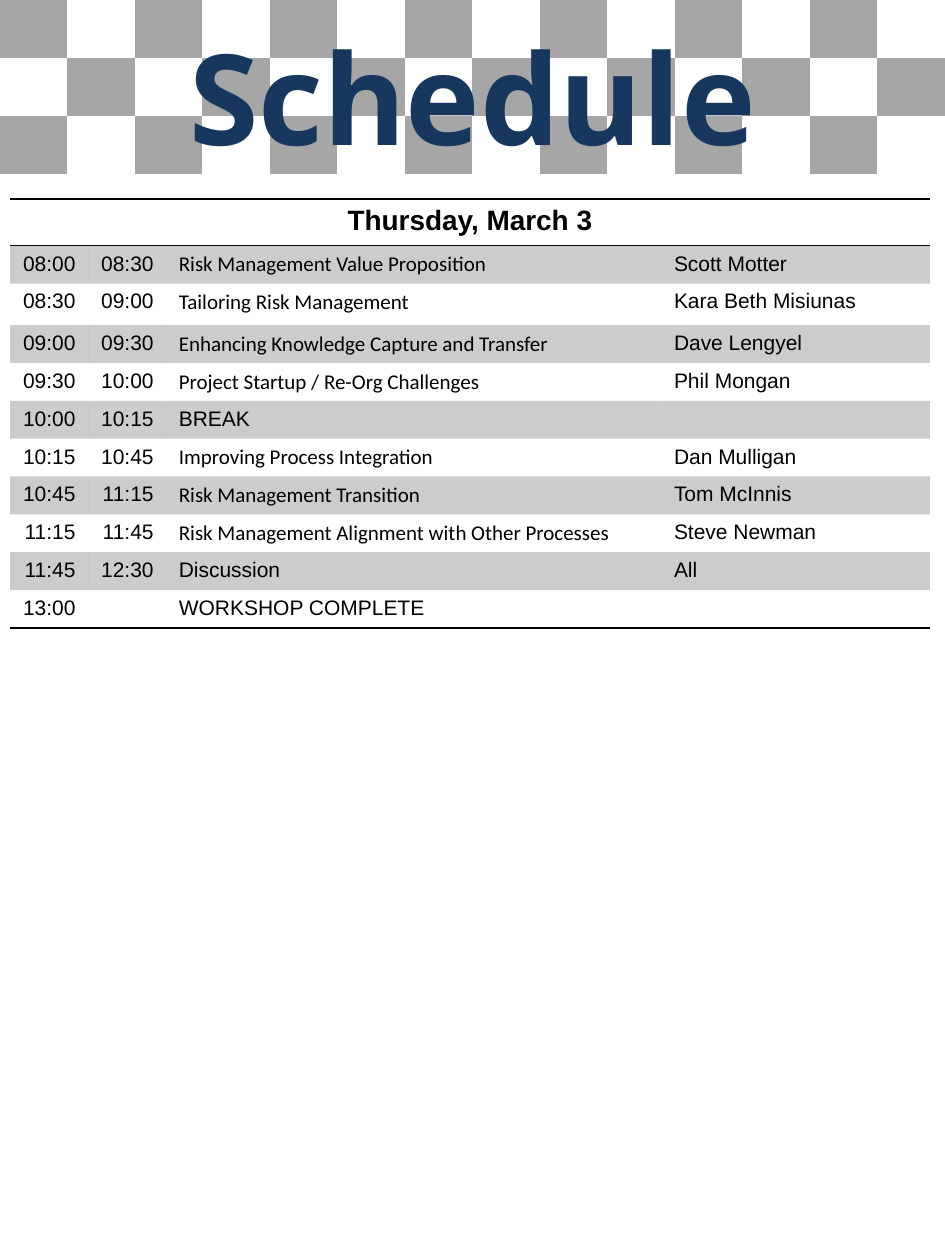
from typing import NamedTuple

from lxml import etree
from pptx import Presentation
from pptx import util as u
from pptx.dml.color import RGBColor
from pptx.enum import text
from pptx.oxml import ns

BLACK = RGBColor(0x00, 0x00, 0x00)
WHITE = RGBColor(0xFF, 0xFF, 0xFF)
GRAY = RGBColor(0xA6, 0xA6, 0xA6)
NAVY = RGBColor(0x17, 0x37, 0x5E)
PLAIN_TABLE = "{2D5ABB26-0587-4C30-8999-92F81FD0307C}"

BODY = {"name": "Arial", "size": u.Pt(12), "bold": False}
TALK = {**BODY, "name": "Calibri"}
HEADING = {**BODY, "size": u.Pt(16), "bold": True}
TITLE = {"name": "Open Sans", "size": u.Pt(72), "bold": True}


class Session(NamedTuple):
    start: str
    end: str
    topic: str
    speaker: str = ""
    topic_format: dict = TALK


SESSIONS = [
    Session("08:00", "08:30", "Risk Management Value Proposition", "Scott Motter"),
    Session("08:30", "09:00", "Tailoring Risk Management", "Kara Beth Misiunas"),
    Session("09:00", "09:30", "Enhancing Knowledge Capture and Transfer", "Dave Lengyel"),
    Session("09:30", "10:00", "Project Startup / Re-Org Challenges", "Phil Mongan"),
    Session("10:00", "10:15", "BREAK", topic_format=BODY),
    Session("10:15", "10:45", "Improving Process Integration", "Dan Mulligan"),
    Session("10:45", "11:15", "Risk Management Transition", "Tom McInnis"),
    Session("11:15", "11:45", "Risk Management Alignment with Other Processes", "Steve Newman"),
    Session("11:45", "12:30", "Discussion", "All", BODY),
    Session("13:00", "", "WORKSHOP COMPLETE", topic_format=BODY),
]


def write(para, words: str, style: dict, color: RGBColor, align) -> None:
    para.alignment = align
    span = para.add_run()
    span.text = words
    for name, value in style.items():
        setattr(span.font, name, value)
    span.font.color.rgb = color


def add_plain_table(page, left: float, top: float, widths: list, heights: list):
    frame = page.shapes.add_table(
        len(heights), len(widths), u.Inches(left), u.Inches(top),
        u.Inches(sum(widths)), u.Inches(sum(heights)))
    table = frame.table
    table.first_row = table.horz_banding = False
    for style_id in frame.element.iter(ns.qn("a:tableStyleId")):
        style_id.text = PLAIN_TABLE
    for column, width in zip(table.columns, widths):
        column.width = u.Inches(width)
    for row, height in zip(table.rows, heights):
        row.height = u.Inches(height)
    return table


def add_rule(cell, side: str) -> None:
    properties = cell._tc.get_or_add_tcPr()
    line = etree.Element(ns.qn(f"a:{side}"), w=str(u.Pt(1)))
    fill = etree.SubElement(line, ns.qn("a:solidFill"))
    etree.SubElement(fill, ns.qn("a:srgbClr"), val=str(BLACK))
    properties.insert(0, line)


def shade(cell) -> None:
    cell.fill.solid()
    cell.fill.fore_color.rgb = BLACK
    for color in cell._tc.iterfind("a:tcPr/a:solidFill/a:srgbClr", cell._tc.nsmap):
        etree.SubElement(color, ns.qn("a:alpha"), val="20000")


def draw_checkerboard(page) -> None:
    columns, rows = 14, 3
    table = add_plain_table(page, 0, 0, [7.5 / columns] * columns, [0.46] * rows)
    for row in range(rows):
        for column in range(columns):
            cell = table.cell(row, column)
            cell.fill.solid()
            cell.fill.fore_color.rgb = WHITE if (row + column) % 2 else GRAY


def draw_title(page) -> None:
    box = page.shapes.add_textbox(
        u.Inches(0.5), u.Inches(0.1), u.Inches(6.5), u.Inches(1.31))
    frame = box.text_frame
    frame.word_wrap = True
    frame.auto_size = text.MSO_AUTO_SIZE.SHAPE_TO_FIT_TEXT
    frame.vertical_anchor = text.MSO_ANCHOR.MIDDLE
    write(frame.paragraphs[0], "Schedule", TITLE, NAVY, text.PP_ALIGN.CENTER)


def draw_schedule(page) -> None:
    heights = [0.37] + [0.3] * len(SESSIONS)
    heights[2] = 0.33
    table = add_plain_table(page, 0.08, 1.58, [0.62, 0.62, 3.93, 2.13], heights)

    heading = table.cell(0, 0)
    heading.merge(table.cell(0, 3))
    write(heading.text_frame.paragraphs[0], "Thursday, March 3", HEADING, BLACK,
          text.PP_ALIGN.CENTER)
    for cell in table.rows[0].cells:
        add_rule(cell, "lnB")
        add_rule(cell, "lnT")

    for row, session in enumerate(SESSIONS, start=1):
        for column, words in enumerate(session[:4]):
            cell = table.cell(row, column)
            if words:
                align = text.PP_ALIGN.RIGHT if column < 2 else text.PP_ALIGN.LEFT
                style = session.topic_format if column == 2 else BODY
                write(cell.text_frame.paragraphs[0], words, style, BLACK, align)
            else:
                cell.margin_top = cell.margin_bottom = 0
            if row % 2:
                shade(cell)
            if row == len(SESSIONS):
                add_rule(cell, "lnB")


def main() -> None:
    deck = Presentation()
    deck.slide_width, deck.slide_height = u.Inches(7.5), u.Inches(10)
    page = deck.slides.add_slide(deck.slide_layouts[6])
    draw_checkerboard(page)
    draw_title(page)
    draw_schedule(page)
    deck.save("out.pptx")


if __name__ == "__main__":
    main()
